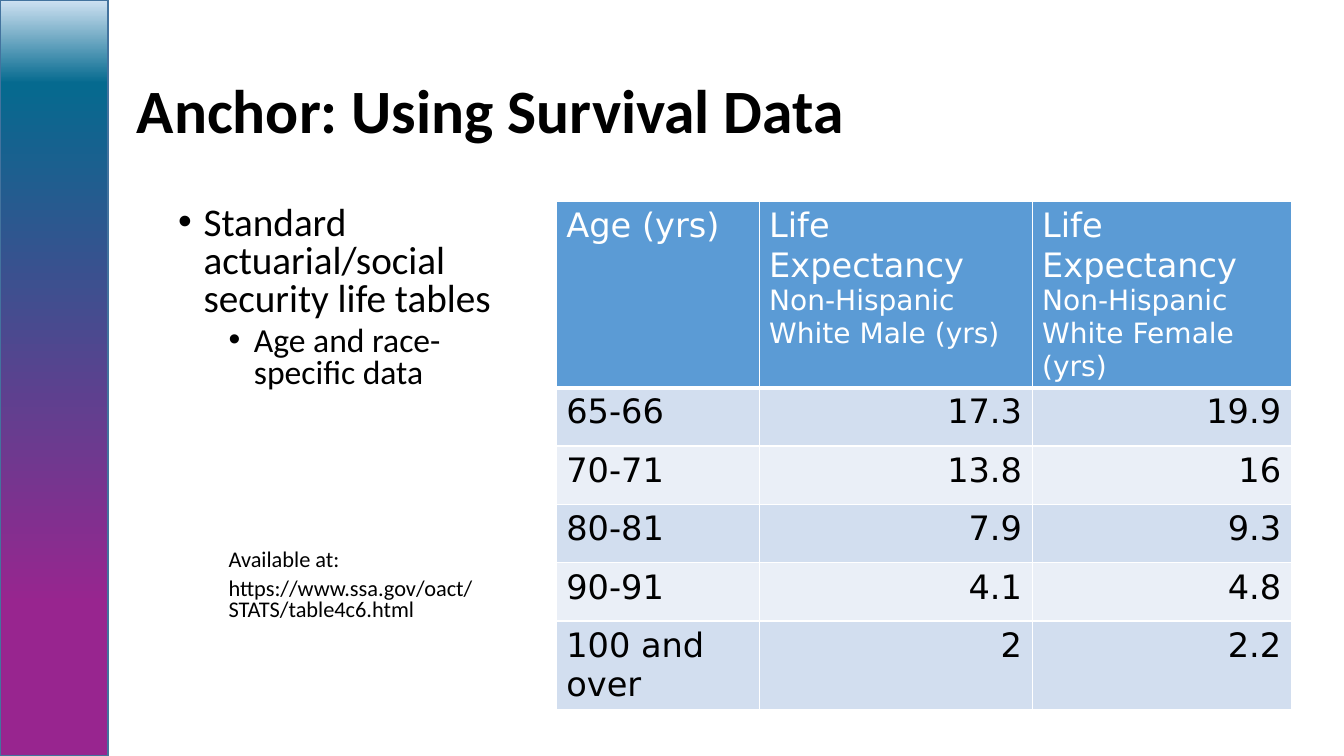
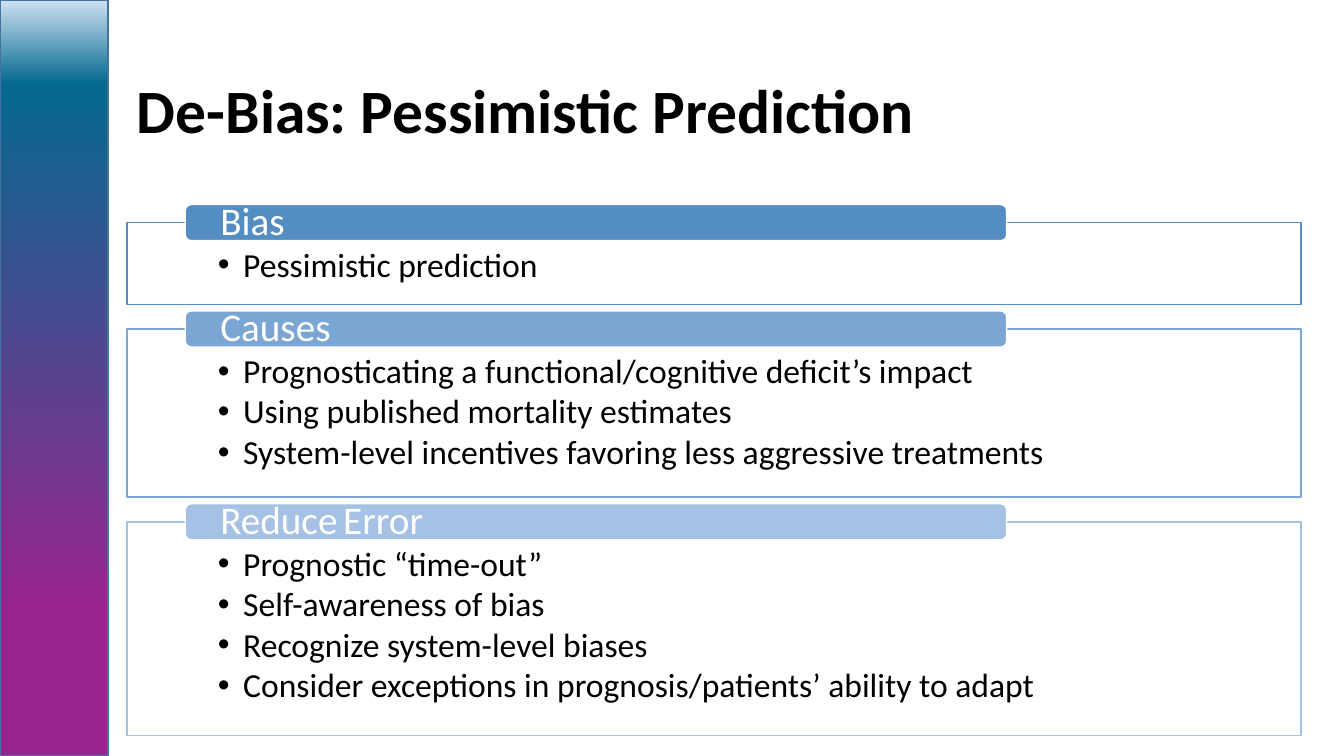
from lxml import etree
from pptx import Presentation
from pptx.dml.color import RGBColor
from pptx.enum.shapes import MSO_SHAPE as Shape
from pptx.enum.text import MSO_ANCHOR as Anchor, MSO_AUTO_SIZE as AutoSize, PP_ALIGN as Align
from pptx.oxml.ns import qn
from pptx.util import Cm, Pt

# Content
SURVIVAL_TITLE = "Anchor: Using Survival Data"
SURVIVAL_POINTS = [  # text, size, left indent (cm), space before
    ("Standard actuarial/social security life tables", 28, 0.64, 0),
    ("Age and race-specific data", 24, 1.91, 5),
]
SOURCE_LINES = ["Available at:", "https://www.ssa.gov/oact/STATS/table4c6.html"]
LIFE_HEADER = [
    ["Age (yrs)"],
    ["Life Expectancy", "Non-Hispanic White Male (yrs)"],
    ["Life Expectancy", "Non-Hispanic White Female (yrs)"],
]
LIFE_ROWS = [
    ("65-66", "17.3", "19.9"),
    ("70-71", "13.8", "16"),
    ("80-81", "7.9", "9.3"),
    ("90-91", "4.1", "4.8"),
    ("100 and over", "2", "2.2"),
]
COLUMN_WIDTHS = [5.11, 6.88, 6.53]
ROW_HEIGHTS = [3.61, 1.47, 1.47, 1.47, 1.47, 1.93]

BIAS_TITLE = "De-Bias: Pessimistic Prediction"
BIAS_PANELS = [  # heading runs, colour, height (cm), points
    ([("Bias", 28)], "538DC1", 2.06, ["Pessimistic prediction"]),
    ([("Causes", 28)], "7BA6D3", 4.24, [
        "Prognosticating a functional/cognitive deficit’s impact",
        "Using published mortality estimates",
        "System-level incentives favoring less aggressive treatments",
    ]),
    ([("Reduce", 28), (" ", 18), ("Error", 28)], "A5C1E3", 5.38, [
        "Prognostic “time-out”",
        "Self-awareness of bias",
        "Recognize system-level biases",
        "Consider exceptions in prognosis/patients’ ability to adapt",
    ]),
]

# Shared look
BLACK, WHITE = "000000", "FFFFFF"
BODY_FONT, TABLE_FONT = "Calibri", "DejaVu Sans"
HEADER_FILL, BAND_FILLS = "5B9BD5", ("D2DEEF", "EAEFF7")
SIDEBAR_STOPS = [(20, "98258F"), (89, "056A8F"), (100, "CEE1F2")]
SIDEBAR_LINE = "43739E"
SLIDE_WIDTH, SLIDE_HEIGHT = 33.87, 19.05
TITLE_BOX = (3.2, 1.02, 29.57, 3.68)
PANEL_LEFT, PANEL_TOP, PANEL_WIDTH, PANEL_GAP = 3.2, 5.61, 29.59, 0.62
TAB_LEFT, TAB_WIDTH, TAB_HEIGHT = 4.67, 20.7, 0.91


def rgb(color):
    return RGBColor.from_string(color)


def cms(values):
    return [Cm(value) for value in values]


def add_text(frame, text, size=24, color=BLACK, font=BODY_FONT, bold=False, align=Align.LEFT,
             spacing=None, before=0, after=0, indent=None):
    """Add a paragraph; text is a string or (text, size) runs, indent (cm) gives a bullet."""
    paragraph = frame.paragraphs[0]
    if paragraph.runs:
        paragraph = frame.add_paragraph()
    if indent is not None:
        properties = paragraph._p.get_or_add_pPr()
        properties.set("marL", str(Cm(indent)))
        properties.set("indent", str(-Cm(0.64)))
        etree.SubElement(properties, qn("a:buFont"), typeface="Arial")
        etree.SubElement(properties, qn("a:buChar"), char="•")
    paragraph.alignment = align
    paragraph.line_spacing = spacing
    paragraph.space_before, paragraph.space_after = Pt(before), Pt(after)
    for words, points in [(text, size)] if isinstance(text, str) else text:
        run = paragraph.add_run()
        run.text = words
        run.font.name, run.font.size, run.font.bold = font, Pt(points), bold
        run.font.color.rgb = rgb(color)


def set_frame(frame, insets=(0.25, 0.13, 0.25, 0.13), anchor=Anchor.TOP):
    frame.word_wrap, frame.auto_size = True, AutoSize.NONE
    frame.vertical_anchor = anchor
    (frame.margin_left, frame.margin_top,
     frame.margin_right, frame.margin_bottom) = cms(insets)
    return frame


def add_box(slide, preset, box, fill, line):
    box_shape = slide.shapes.add_shape(preset, *cms(box))
    box_shape.shadow.inherit = False
    if fill:
        box_shape.fill.solid()
        box_shape.fill.fore_color.rgb = rgb(fill)
    box_shape.line.color.rgb = rgb(line)
    box_shape.line.width = Pt(1)
    return box_shape


def add_color(parent, color):
    return etree.SubElement(parent, qn("a:srgbClr"), val=color)


def add_sidebar(slide):
    sidebar = add_box(slide, Shape.RECTANGLE, (0, 0, 2.72, SLIDE_HEIGHT), None, SIDEBAR_LINE)
    sidebar.fill.gradient()
    sidebar.fill.gradient_angle = 90
    stops = sidebar.element.find(".//" + qn("a:gsLst"))
    stops.clear()
    for position, color in SIDEBAR_STOPS:
        add_color(etree.SubElement(stops, qn("a:gs"), pos=str(position * 1000)), color)


def add_titled_slide(deck, title):
    slide = deck.slides.add_slide(deck.slide_layouts[5])
    add_sidebar(slide)
    holder = slide.shapes.title
    holder.left, holder.top, holder.width, holder.height = cms(TITLE_BOX)
    add_text(set_frame(holder.text_frame, anchor=Anchor.MIDDLE), title,
             size=44, bold=True, spacing=0.9)
    return slide


def set_borders(cell, bottom):
    properties = cell._tc.get_or_add_tcPr()
    widths = {"a:lnL": 1, "a:lnR": 1, "a:lnT": 1, "a:lnB": bottom}
    for index, (side, width) in enumerate(widths.items()):
        border = etree.Element(qn(side), w=str(Pt(width)))
        add_color(etree.SubElement(border, qn("a:solidFill")), WHITE)
        properties.insert(index, border)


def add_life_table(slide):
    table = slide.shapes.add_table(
        len(ROW_HEIGHTS), len(COLUMN_WIDTHS),
        *cms((14.02, 5.08, sum(COLUMN_WIDTHS), sum(ROW_HEIGHTS)))).table
    for column, width in zip(table.columns, COLUMN_WIDTHS):
        column.width = Cm(width)
    for row, height in zip(table.rows, ROW_HEIGHTS):
        row.height = Cm(height)

    def fill_cell(row, column, lines, fill, color, align=Align.LEFT, bottom=1):
        cell = table.cell(row, column)
        cell.fill.solid()
        cell.fill.fore_color.rgb = rgb(fill)
        set_borders(cell, bottom)
        for line, size in zip(lines, (24, 20)):
            add_text(cell.text_frame, line, size=size, color=color, font=TABLE_FONT, align=align)

    for column, lines in enumerate(LIFE_HEADER):
        fill_cell(0, column, lines, HEADER_FILL, WHITE, bottom=3)
    for row, values in enumerate(LIFE_ROWS, 1):
        for column, value in enumerate(values):
            fill_cell(row, column, [value], BAND_FILLS[(row - 1) % 2], BLACK,
                      align=Align.RIGHT if column else Align.LEFT)


def build_survival_slide(deck):
    slide = add_titled_slide(deck, SURVIVAL_TITLE)
    points = set_frame(slide.shapes.add_textbox(*cms((4.24, 5.08, 8.56, 5))).text_frame)
    for text, size, indent, before in SURVIVAL_POINTS:
        add_text(points, text, size=size, indent=indent, before=before, spacing=0.8)
    source = set_frame(slide.shapes.add_textbox(*cms((5.51, 13.74, 7.29, 2.4))).text_frame)
    for number, line in enumerate(SOURCE_LINES):
        add_text(source, line, size=16, before=5 if number else 0, spacing=0.8)
    add_life_table(slide)


def build_bias_slide(deck):
    slide = add_titled_slide(deck, BIAS_TITLE)
    top = PANEL_TOP
    for heading, color, height, points in BIAS_PANELS:
        # Outlined panel with its points
        panel = add_box(slide, Shape.RECTANGLE, (PANEL_LEFT, top, PANEL_WIDTH, height),
                        WHITE, color)
        panel_color = panel.element.spPr.find(qn("a:solidFill") + "/" + qn("a:srgbClr"))
        etree.SubElement(panel_color, qn("a:alpha"), val="90000")
        frame = set_frame(panel.text_frame, insets=(2.29, 0.64, 2.29, 0.48))
        for point in points:
            add_text(frame, point, indent=0.64, spacing=0.9, after=3)
        # Heading tab centred on the panel's top edge
        tab = add_box(slide, Shape.ROUNDED_RECTANGLE,
                      (TAB_LEFT, top - TAB_HEIGHT / 2, TAB_WIDTH, TAB_HEIGHT), color, WHITE)
        add_text(set_frame(tab.text_frame, insets=(0.84, 0, 0.84, 0), anchor=Anchor.MIDDLE),
                 heading, color=WHITE, spacing=0.9)
        top += height + PANEL_GAP


def main():
    deck = Presentation()
    deck.slide_width, deck.slide_height = Cm(SLIDE_WIDTH), Cm(SLIDE_HEIGHT)
    build_survival_slide(deck)
    build_bias_slide(deck)
    deck.save("out.pptx")


if __name__ == "__main__":
    main()
